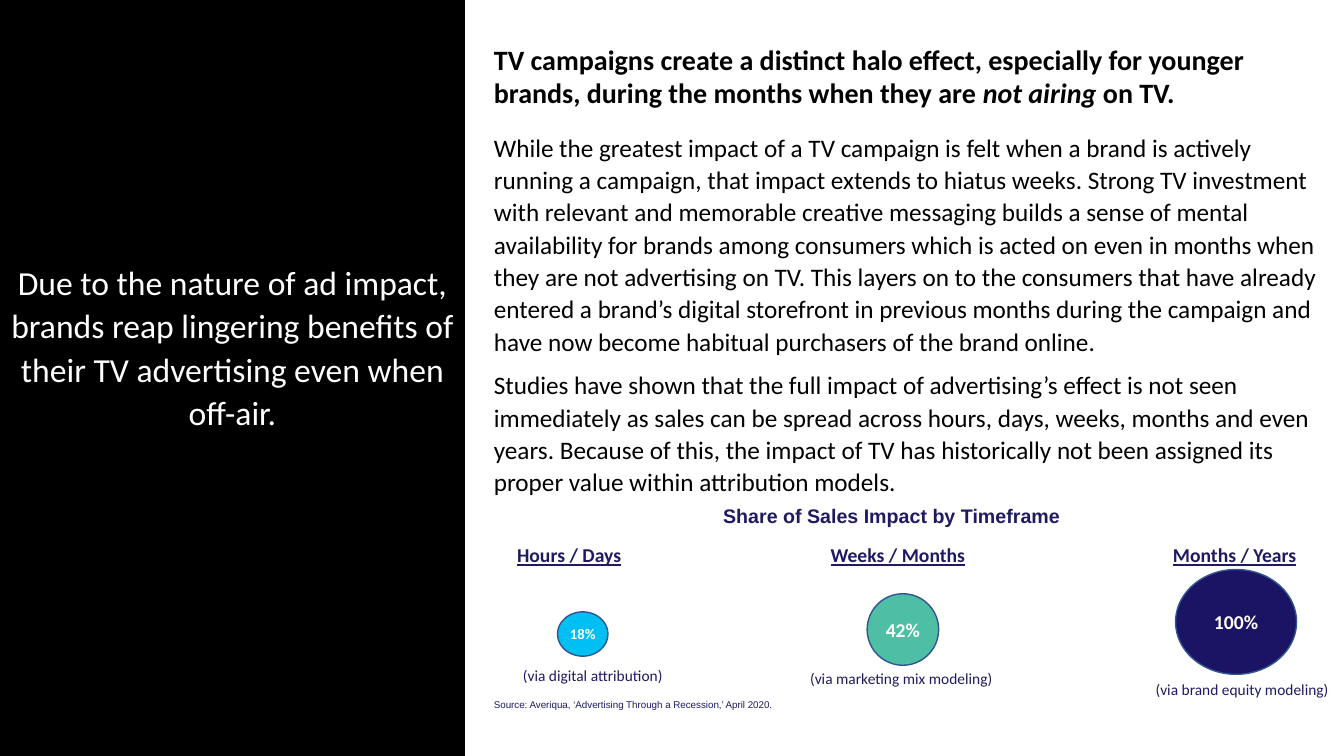
import dataclasses
import typing

import pptx
import pptx.dml.color
import pptx.enum.shapes
import pptx.enum.text
import pptx.util

Inches = pptx.util.Inches
Align = pptx.enum.text.PP_ALIGN
Anchor = pptx.enum.text.MSO_ANCHOR
Preset = pptx.enum.shapes.MSO_SHAPE


@dataclasses.dataclass(frozen=True)
class Theme:
    black: str = "000000"
    white: str = "FFFFFF"
    navy: str = "1F1A62"
    deep_navy: str = "1B1464"
    green: str = "4EBEA4"
    cyan: str = "00BFF2"
    outline: str = "325491"
    body_font: str = "Calibri"
    label_font: str = "Arial"
    panel_size: float = 24
    headline_size: float = 20
    body_size: float = 18
    label_size: float = 14
    method_size: float = 11
    small_size: float = 10.5
    source_size: float = 7
    body_leading: float = 1.07
    body_gap: float = 8
    headline_gap: float = 14.5


THEME = Theme()


@dataclasses.dataclass(frozen=True)
class Box:
    left: float
    top: float
    width: float
    height: float

    def lengths(self) -> tuple[int, int, int, int]:
        return Inches(self.left), Inches(self.top), Inches(self.width), Inches(self.height)


@dataclasses.dataclass(frozen=True)
class Span:
    text: str
    size: float
    color: str = THEME.navy
    font: str = THEME.body_font
    bold: bool = False
    italic: bool = False
    underline: bool = False


@dataclasses.dataclass(frozen=True)
class Para:
    spans: tuple[Span, ...]
    align: Align = Align.CENTER
    leading: float = 1.0
    after: float = 0


@dataclasses.dataclass(frozen=True)
class Timeframe:
    name: str
    name_left: float
    share: str
    share_size: float
    bubble: Box
    fill: str
    side_margin: float
    method: str
    method_left: float
    method_top: float


def write_paras(frame: typing.Any, paras: typing.Sequence[Para]) -> None:
    frame.word_wrap = True
    for index, item in enumerate(paras):
        para = frame.paragraphs[0] if index == 0 else frame.add_paragraph()
        para.alignment = item.align
        para.line_spacing = item.leading
        para.space_after = pptx.util.Pt(item.after)
        for span in item.spans:
            run = para.add_run()
            run.text = span.text
            run.font.name = span.font
            run.font.size = pptx.util.Pt(span.size)
            run.font.bold = span.bold
            run.font.italic = span.italic
            run.font.underline = span.underline
            run.font.color.rgb = pptx.dml.color.RGBColor.from_string(span.color)


def add_text(page: typing.Any, box: Box, *paras: Para) -> typing.Any:
    frame = page.shapes.add_textbox(*box.lengths()).text_frame
    write_paras(frame, paras)
    frame.auto_size = pptx.enum.text.MSO_AUTO_SIZE.SHAPE_TO_FIT_TEXT
    return frame


def add_filled(page: typing.Any, preset: Preset, box: Box, fill: str, outline: str, para: Para) -> typing.Any:
    shape = page.shapes.add_shape(preset, *box.lengths())
    shape.shadow.inherit = False
    shape.fill.solid()
    shape.fill.fore_color.rgb = pptx.dml.color.RGBColor.from_string(fill)
    shape.line.color.rgb = pptx.dml.color.RGBColor.from_string(outline)
    shape.line.width = pptx.util.Pt(1)
    shape.text_frame.vertical_anchor = Anchor.MIDDLE
    write_paras(shape.text_frame, [para])
    return shape.text_frame


def add_timeframe(page: typing.Any, item: Timeframe) -> None:
    share = Span(item.share, item.share_size, THEME.white, bold=True)
    frame = add_filled(page, Preset.OVAL, item.bubble, item.fill, THEME.outline, Para((share,)))
    frame.margin_left = frame.margin_right = Inches(item.side_margin)
    name = Span(item.name, THEME.label_size, bold=True, underline=True)
    add_text(page, Box(item.name_left, 5.34, 2.19, 0.34), Para((name,)))
    method = Span(item.method, THEME.method_size)
    add_text(page, Box(item.method_left, item.method_top, 2.24, 0.29), Para((method,)))


PANEL_TEXT = ("Due to the nature of ad impact, brands reap lingering benefits of "
              "their TV advertising even when off-air.")

HEADLINE = (
    ("TV campaigns create a distinct halo effect, especially for younger brands, "
     "during the months when they are ", False),
    ("not airing ", True),
    ("on TV.", False),
)

BODY = (
    "While the greatest impact of a TV campaign is felt when a brand is actively running a campaign, "
    "that impact extends to hiatus weeks. Strong TV investment with relevant and memorable creative "
    "messaging builds a sense of mental availability for brands among consumers which is acted on even "
    "in months when they are not advertising on TV. This layers on to the consumers that have already "
    "entered a brand’s digital storefront in previous months during the campaign and have now become "
    "habitual purchasers of the brand online.",
    "Studies have shown that the full impact of advertising’s effect is not seen immediately as sales "
    "can be spread across hours, days, weeks, months and even years. Because of this, the impact of TV "
    "has historically not been assigned its proper value within attribution models.",
)

TIMEFRAMES = (
    Timeframe("Hours / Days", 4.55, "18%", THEME.small_size, Box(5.53, 6.07, 0.5, 0.44),
              THEME.cyan, 0, "(via digital attribution)", 4.76, 6.56),
    Timeframe("Weeks / Months", 7.81, "42%", THEME.label_size, Box(8.6, 5.89, 0.71, 0.71),
              THEME.green, 0, "(via marketing mix modeling)", 7.82, 6.59),
    Timeframe("Months / Years", 11.15, "100%", THEME.label_size, Box(11.66, 5.65, 1.2, 1.04),
              THEME.deep_navy, 0.1, "(via brand equity modeling)", 11.2, 6.7),
)


def main() -> None:
    deck = pptx.Presentation()
    deck.slide_width, deck.slide_height = Inches(13.33), Inches(7.5)
    page = deck.slides.add_slide(deck.slide_layouts[6])

    message = Para((Span(PANEL_TEXT, THEME.panel_size, THEME.white),), leading=THEME.body_leading)
    panel = add_filled(page, Preset.RECTANGLE, Box(0, 0, 4.61, 7.51), THEME.black, THEME.black, message)
    panel.margin_bottom = Inches(0.7)

    headline = Para(tuple(Span(text, THEME.headline_size, THEME.black, bold=True, italic=italic)
                          for text, italic in HEADLINE), Align.LEFT, after=THEME.headline_gap)
    body = [Para((Span(text, THEME.body_size, THEME.black),), Align.LEFT, THEME.body_leading, THEME.body_gap)
            for text in BODY]
    story = add_text(page, Box(4.8, 0.06, 8.39, 7.12), headline, *body)
    story.margin_top = Inches(0.36)

    for timeframe in TIMEFRAMES:
        add_timeframe(page, timeframe)

    source = Span("Source: Averiqua, ‘Advertising Through a Recession,’ April 2020.",
                  THEME.source_size, font=THEME.label_font)
    add_text(page, Box(4.8, 6.88, 8.43, 0.22), Para((source,), Align.LEFT))
    title = Span("Share of Sales Impact by Timeframe", THEME.label_size, font=THEME.label_font, bold=True)
    add_text(page, Box(4.58, 4.95, 8.53, 0.34), Para((title,)))

    deck.save("out.pptx")


if __name__ == "__main__":
    main()
